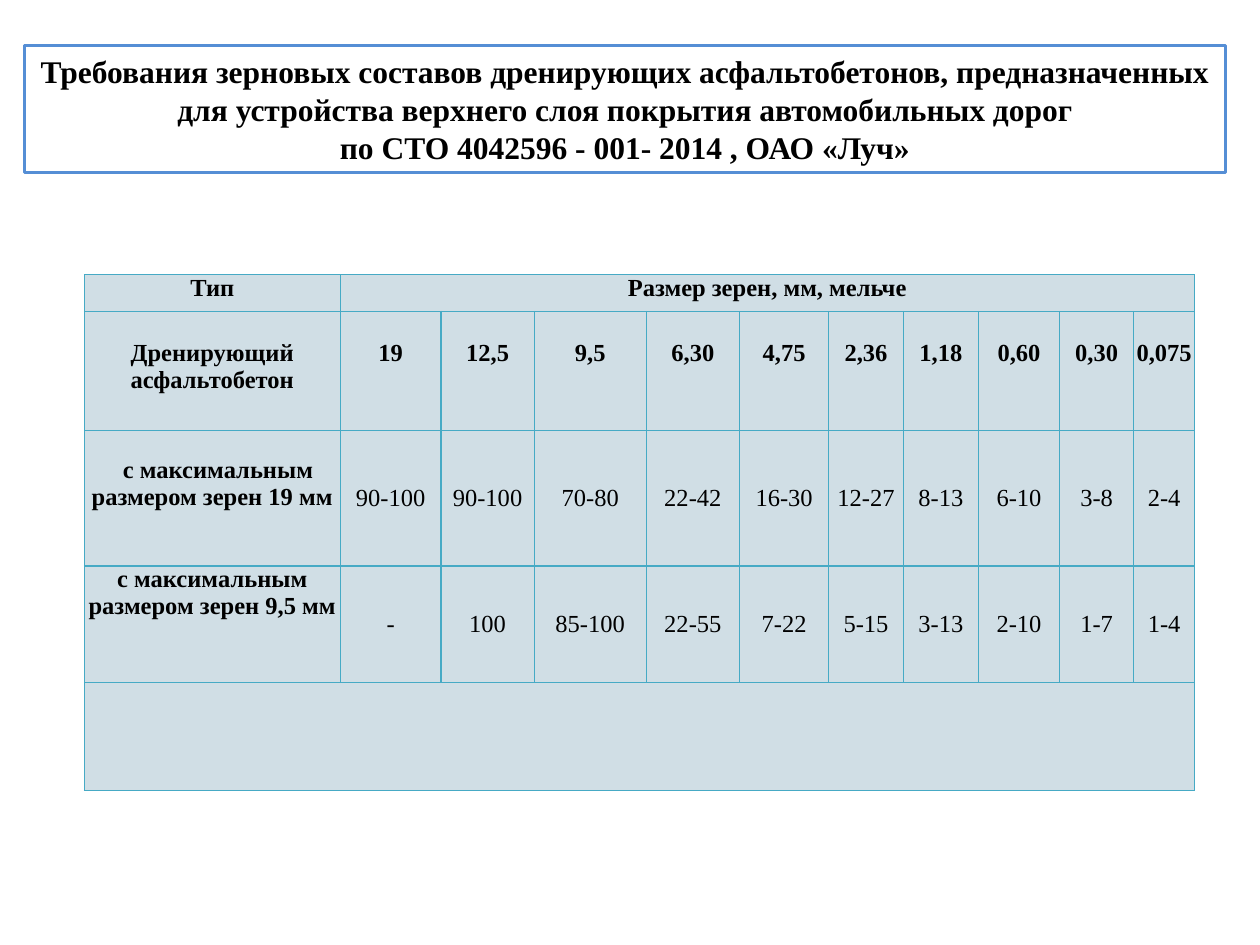
from lxml.etree import SubElement
from pptx import Presentation
from pptx.dml.color import RGBColor
from pptx.enum.shapes import MSO_SHAPE
from pptx.enum.text import MSO_ANCHOR, PP_ALIGN
from pptx.oxml.ns import qn
from pptx.util import Cm, Pt

BLACK = RGBColor(0x00, 0x00, 0x00)
WHITE = RGBColor(0xFF, 0xFF, 0xFF)
TITLE_BLUE = RGBColor(0x55, 0x8E, 0xD5)
GRID_BLUE = RGBColor(0x46, 0xAA, 0xC5)
CELL_FILL = RGBColor(0xD0, 0xDE, 0xE5)
FONT = "Times New Roman"
LINE_GAP = Cm(0.57)  # one line of 14 pt text

TITLE = [
    "Требования зерновых составов дренирующих асфальтобетонов, предназначенных "
    "для устройства верхнего слоя покрытия автомобильных дорог",
    "по СТО 4042596 - 001- 2014 , ОАО «Луч»",
]
COLUMN_WIDTHS = [5.16, 2.03, 1.88, 2.26, 1.88, 1.8, 1.5, 1.52, 1.63, 1.5, 1.22]
ROW_HEIGHTS = [0.74, 2.39, 2.74, 2.34, 2.18]
GRADING = [
    ["Тип", "Размер зерен, мм, мельче"],
    ["Дренирующий асфальтобетон", "19", "12,5", "9,5", "6,30", "4,75",
     "2,36", "1,18", "0,60", "0,30", "0,075"],
    ["с максимальным размером зерен 19 мм", "90-100", "90-100", "70-80", "22-42",
     "16-30", "12-27", "8-13", "6-10", "3-8", "2-4"],
    ["с максимальным размером зерен 9,5 мм", "-", "100", "85-100", "22-55",
     "7-22", "5-15", "3-13", "2-10", "1-7", "1-4"],
]
SIZES_ROW, COARSE_ROW = 1, 2


def add_text(para, text, size, bold):
    para.alignment = PP_ALIGN.CENTER
    span = para.add_run()
    span.text = text
    span.font.name = FONT
    span.font.size = Pt(size)
    span.font.bold = bold
    span.font.color.rgb = BLACK


def add_title(page):
    box = page.shapes.add_shape(MSO_SHAPE.RECTANGLE, Cm(0.5), Cm(0.91), Cm(24.2), Cm(2.57))
    box.shadow.inherit = False
    box.fill.solid()
    box.fill.fore_color.rgb = WHITE
    box.line.color.rgb = TITLE_BLUE
    box.line.width = Pt(1.75)
    frame = box.text_frame
    frame.word_wrap = True
    for index, text in enumerate(TITLE):
        para = frame.add_paragraph() if index else frame.paragraphs[0]
        add_text(para, text, 18, True)


def style_cell(cell):
    """Give the cell its thin borders, fill and narrow margins."""
    properties = cell._tc.get_or_add_tcPr()
    for side in ("a:lnL", "a:lnR", "a:lnT", "a:lnB"):
        border = SubElement(properties, qn(side), w=str(Pt(0.75)))
        paint = SubElement(border, qn("a:solidFill"))
        SubElement(paint, qn("a:srgbClr"), val=str(GRID_BLUE))
    cell.fill.solid()
    cell.fill.fore_color.rgb = CELL_FILL
    cell.margin_left = cell.margin_right = Cm(0.05)
    cell.margin_top = cell.margin_bottom = 0


def add_grading_table(page):
    frame = page.shapes.add_table(
        len(ROW_HEIGHTS), len(COLUMN_WIDTHS), Cm(1.7), Cm(5.54),
        Cm(sum(COLUMN_WIDTHS)), Cm(sum(ROW_HEIGHTS)))
    table = frame.table
    table.first_row = table.horz_banding = False
    for column, width in zip(table.columns, COLUMN_WIDTHS):
        column.width = Cm(width)
    for row, height in zip(table.rows, ROW_HEIGHTS):
        row.height = Cm(height)
    for cell in table.iter_cells():
        style_cell(cell)

    last_row, last_column = len(ROW_HEIGHTS) - 1, len(COLUMN_WIDTHS) - 1
    table.cell(0, 1).merge(table.cell(0, last_column))
    table.cell(last_row, 0).merge(table.cell(last_row, last_column))

    for row_index, texts in enumerate(GRADING):
        for column_index, text in enumerate(texts):
            cell = table.cell(row_index, column_index)
            is_value = row_index > SIZES_ROW and column_index > 0
            add_text(cell.text_frame.paragraphs[0], text, 14, not is_value)
            if is_value:
                cell.vertical_anchor = MSO_ANCHOR.MIDDLE
            if row_index == SIZES_ROW:
                cell.margin_top = LINE_GAP

    coarse_label = table.cell(COARSE_ROW, 0)
    coarse_label.vertical_anchor = MSO_ANCHOR.MIDDLE
    coarse_label.margin_bottom = LINE_GAP
    para_properties = coarse_label.text_frame.paragraphs[0]._p.get_or_add_pPr()
    para_properties.set("indent", str(Cm(0.23)))


def main():
    deck = Presentation()
    deck.slide_width, deck.slide_height = Cm(25.4), Cm(19.05)
    page = deck.slides.add_slide(deck.slide_layouts[6])
    add_grading_table(page)
    add_title(page)
    deck.save("out.pptx")


if __name__ == "__main__":
    main()
